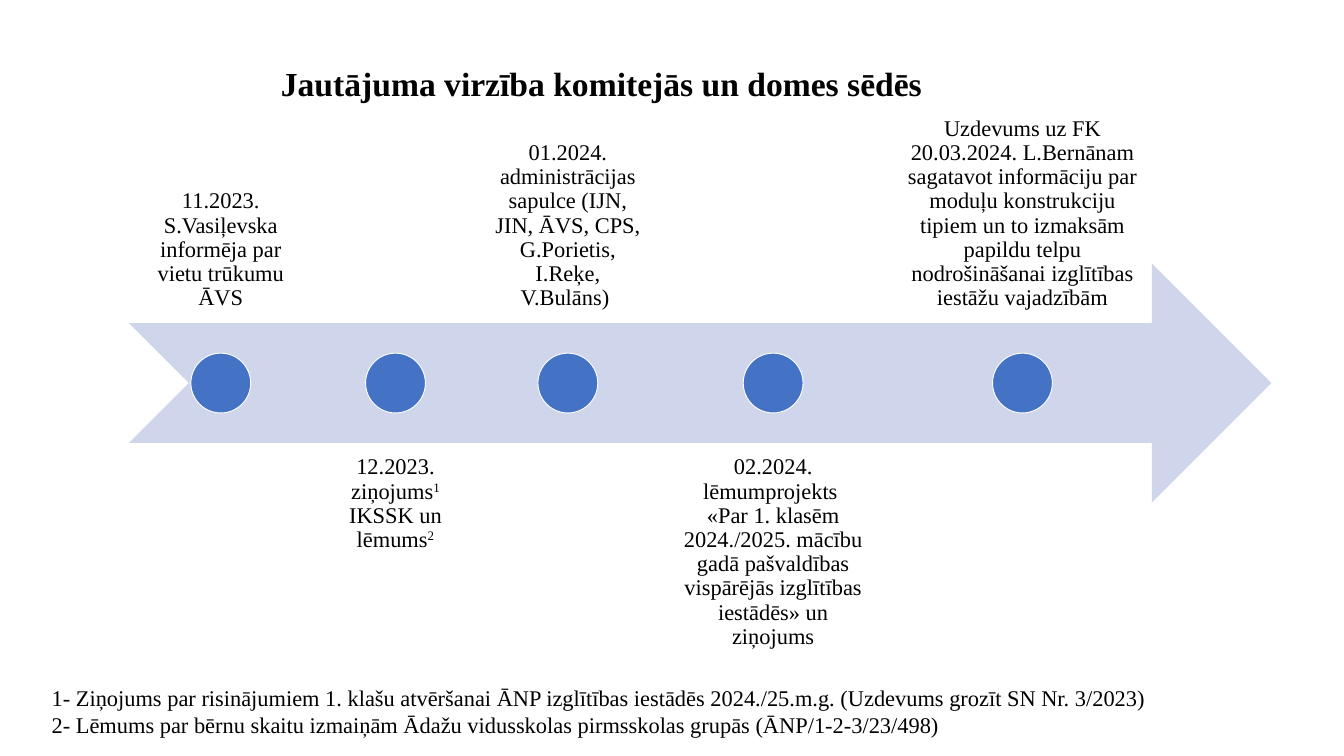
from pptx import Presentation, util as u
from pptx.dml.color import RGBColor
from pptx.enum import shapes, text

TITLE = "Jautājuma virzība komitejās un domes sēdēs"
# (column width in inches, text); ^ encloses superscripts
STEPS = [
    (2.73, "11.2023. S.Vasiļevska informēja par vietu trūkumu ĀVS"),
    (2.25, "12.2023. ziņojums^1^ IKSSK un lēmums^2^"),
    (2.66, "01.2024. administrācijas sapulce (IJN, JIN, ĀVS, CPS, "
           "G.Porietis, I.Reķe, V.Bulāns) "),
    (3.23, "02.2024. lēmumprojekts \v«Par 1. klasēm 2024./2025. mācību gadā "
           "pašvaldības vispārējās izglītības iestādēs» un ziņojums"),
    (3.97, "Uzdevums uz FK 20.03.2024. L.Bernānam sagatavot informāciju par "
           "moduļu konstrukciju tipiem un to izmaksām papildu telpu "
           "nodrošināšanai izglītības iestāžu vajadzībām"),
]
FOOTNOTES = [
    "1- Ziņojums par risinājumiem 1. klašu atvēršanai ĀNP izglītības iestādēs "
    "2024./25.m.g. (Uzdevums grozīt SN Nr. 3/2023)",
    "2- Lēmums par bērnu skaitu izmaiņām Ādažu vidusskolas pirmsskolas grupās "
    "(ĀNP/1-2-3/23/498)",
]
FONT = "Times New Roman"
LEFT, BAND, GAP = 1.92, 3.56, 0.11
ARROW_TOP, ARROW_WIDTH = 3.92, 17
UPPER_TOP, LOWER_TOP = 1.25, 6.59
DOT = BAND / 4


def color(value):
    return RGBColor.from_string(value)


def inches(*values):
    return [u.Inches(v) for v in values]


def write(shape, paragraphs, size=24, bold=False, align=text.PP_ALIGN.LEFT,
          anchor=text.MSO_ANCHOR.TOP, inset=None, spacing=None):
    frame = shape.text_frame
    frame.word_wrap = True
    frame.auto_size = text.MSO_AUTO_SIZE.NONE
    frame.vertical_anchor = anchor
    if inset is not None:
        frame.margin_left = frame.margin_right = u.Inches(inset)
        frame.margin_top = frame.margin_bottom = u.Inches(inset)
    for index, content in enumerate(paragraphs):
        paragraph = frame.add_paragraph() if index else frame.paragraphs[0]
        paragraph.alignment = align
        paragraph.line_spacing = spacing
        for part, piece in enumerate(content.split("^")):
            for line, words in enumerate(piece.split("\v")):
                if line:
                    paragraph.add_line_break()
                if not words:
                    continue
                run = paragraph.add_run()
                run.text = words
                run.font.name, run.font.size = FONT, u.Pt(size)
                run.font.bold = bold
                run.font.color.rgb = color("000000")
                if part % 2:
                    run.font._element.set("baseline", "30000")


def add_figure(slide, kind, box, fill, line=None):
    figure = slide.shapes.add_shape(kind, *inches(*box))
    figure.shadow.inherit = False
    figure.fill.solid()
    figure.fill.fore_color.rgb = color(fill)
    if line:
        figure.line.color.rgb = color(line)
        figure.line.width = u.Pt(1)
    else:
        figure.line.fill.background()


def main():
    deck = Presentation()
    deck.slide_width, deck.slide_height = inches(20, 11.25)
    slide = deck.slides.add_slide(deck.slide_layouts[5])

    # Title
    title = slide.shapes.title
    title.left, title.top, title.width, title.height = inches(4.08, 0.88, 12.25, 0.71)
    write(title, [TITLE], size=36, bold=True)

    # Timeline arrow
    add_figure(slide, shapes.MSO_SHAPE.NOTCHED_RIGHT_ARROW,
               (LEFT, ARROW_TOP, ARROW_WIDTH, BAND), "CFD5EA")

    # Steps alternate above and below the arrow
    left = LEFT
    for index, (width, step) in enumerate(STEPS):
        below = index % 2
        label = slide.shapes.add_textbox(
            *inches(left, LOWER_TOP if below else UPPER_TOP, width, BAND))
        write(label, [step], align=text.PP_ALIGN.CENTER, inset=0.19, spacing=0.9,
              anchor=text.MSO_ANCHOR.TOP if below else text.MSO_ANCHOR.BOTTOM)
        add_figure(slide, shapes.MSO_SHAPE.OVAL,
                   (left + (width - DOT) / 2, ARROW_TOP + (BAND - DOT) / 2, DOT, DOT),
                   "4472C4", line="FFFFFF")
        left += width + GAP

    # Footnotes
    write(slide.shapes.add_textbox(*inches(0.67, 10.13, 16.67, 0.91)), FOOTNOTES)

    deck.save("out.pptx")


if __name__ == "__main__":
    main()
